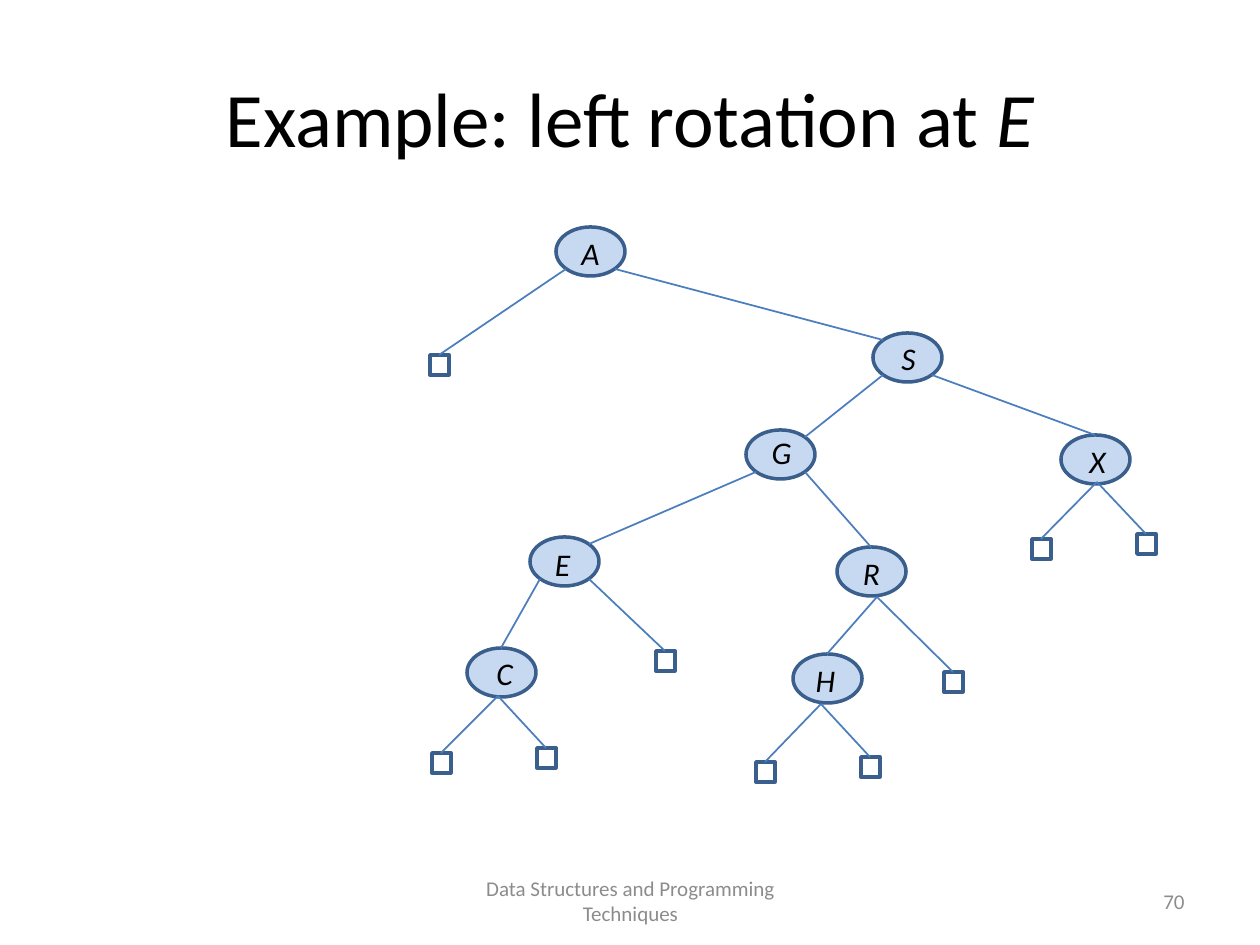
"""Build a slide showing a binary search tree before a left rotation at E."""
from collections import namedtuple
from dataclasses import dataclass

import pptx
import pptx.dml.color
import pptx.enum.shapes
import pptx.enum.text
import pptx.oxml.ns
import pptx.util
from lxml import etree

PX = 914400 // 126
ALIGN = pptx.enum.text.PP_ALIGN
ANCHOR = pptx.enum.text.MSO_ANCHOR
SHAPE = pptx.enum.shapes.MSO_SHAPE


@dataclass(frozen=True)
class Theme:
    font: str = "Calibri"
    text: str = "000000"
    muted: str = "8C8C8C"
    node_fill: str = "C6D9F1"
    outline: str = "3A5F8C"
    edge: str = "4B7EBC"
    title_size: int = 44
    label_size: int = 18
    footer_size: int = 12
    outline_width: int = 2
    edge_width: int = 1


THEME = Theme()
NODE_SIZE = (69, 49)
LEAF_SIZE = (19, 20)
PORTS = {
    "top": (34, 0), "bottom": (34, 49),
    "top_left": (10, 7), "top_right": (59, 7),
    "bottom_left": (10, 42), "bottom_right": (59, 42),
}

Node = namedtuple("Node", "x y label_shift fork_shift", defaults=[(0, 0)])
NODES = {
    "A": Node(556, 227, (0, 1)),
    "S": Node(873, 333, (1, 0)),
    "G": Node(746, 430, (1, -3)),
    "X": Node(1061, 435, (2, 1), (2, -2)),
    "E": Node(530, 537, (-2, 2)),
    "R": Node(837, 547, (0, 1), (6, 1)),
    "C": Node(467, 648, (3, 0), (-3, -1)),
    "H": Node(793, 654, (-2, 1), (-6, 1)),
}
EDGES = [
    ("A", "bottom_right", "S", "top_left"),
    ("S", "bottom_left", "G", "top_right"),
    ("S", "bottom_right", "X", "top"),
    ("G", "bottom_left", "E", "top_right"),
    ("G", "bottom_right", "R", "top"),
    ("E", "bottom_left", "C", "top"),
    ("R", "bottom", "H", "top"),
]
LEAVES = [
    ("A", "bottom_left", 430, 355),
    ("E", "bottom_right", 656, 651),
    ("R", "bottom", 944, 672),
    ("X", "bottom", 1032, 539), ("X", "bottom", 1137, 534),
    ("C", "bottom", 432, 753), ("C", "bottom", 537, 748),
    ("H", "bottom", 756, 762), ("H", "bottom", 861, 757),
]


def emu(*lengths):
    return [length * PX for length in lengths]


def rgb(value):
    return pptx.dml.color.RGBColor.from_string(value)


def add_text(s, box, runs, size, color=THEME.text, align=ALIGN.CENTER,
             anchor=ANCHOR.MIDDLE):
    tf = s.shapes.add_textbox(*emu(*box)).text_frame
    tf.word_wrap = True
    tf.vertical_anchor = anchor
    p = tf.paragraphs[0]
    p.alignment = align
    for text, italic in runs:
        r = p.add_run()
        r.text = text
        r.font.name = THEME.font
        r.font.size = pptx.util.Pt(size)
        r.font.italic = italic
        r.font.color.rgb = rgb(color)


def add_outlined(s, kind, x, y, size, fill=None):
    sp = s.shapes.add_shape(kind, *emu(x, y, *size))
    sp.shadow.inherit = False
    if fill:
        sp.fill.solid()
        sp.fill.fore_color.rgb = rgb(fill)
    else:
        sp.fill.background()
    sp.line.color.rgb = rgb(THEME.outline)
    sp.line.width = pptx.util.Pt(THEME.outline_width)


def add_node(s, name, node):
    add_outlined(s, SHAPE.OVAL, node.x, node.y, NODE_SIZE, THEME.node_fill)
    dx, dy = node.label_shift
    add_text(s, (node.x + dx, node.y + dy, 69, 50), [(name, True)],
             THEME.label_size, anchor=ANCHOR.TOP)


def add_edge(s, start, end):
    line = s.shapes.add_connector(
        pptx.enum.shapes.MSO_CONNECTOR.STRAIGHT, *emu(*start, *end))
    line.line.color.rgb = rgb(THEME.edge)
    line.line.width = pptx.util.Pt(THEME.edge_width)
    etree.SubElement(line._element.spPr, pptx.oxml.ns.qn("a:effectLst"))


def port_of(name, port):
    node = NODES[name]
    px, py = PORTS[port]
    dx, dy = node.fork_shift if port == "bottom" else (0, 0)
    return node.x + px + dx, node.y + py + dy


def add_tree(s):
    for name, node in NODES.items():
        add_node(s, name, node)
    for parent, start, child, end in EDGES:
        add_edge(s, port_of(parent, start), port_of(child, end))
    for parent, start, x, y in LEAVES:
        add_outlined(s, SHAPE.RECTANGLE, x, y, LEAF_SIZE)
        add_edge(s, port_of(parent, start), (x + LEAF_SIZE[0] // 2, y))


def main():
    prs = pptx.Presentation()
    prs.slide_width, prs.slide_height = emu(1260, 945)
    s = prs.slides.add_slide(prs.slide_layouts[6])
    add_text(s, (63, 38, 1134, 157),
             [("Example: left rotation at ", False), ("E", True)],
             THEME.title_size)
    add_tree(s)
    add_text(s, (431, 876, 399, 50),
             [("Data Structures and Programming Techniques", False)],
             THEME.footer_size, THEME.muted)
    add_text(s, (903, 876, 294, 50), [("70", False)],
             THEME.footer_size, THEME.muted, ALIGN.RIGHT)
    prs.save("out.pptx")


if __name__ == "__main__":
    main()
